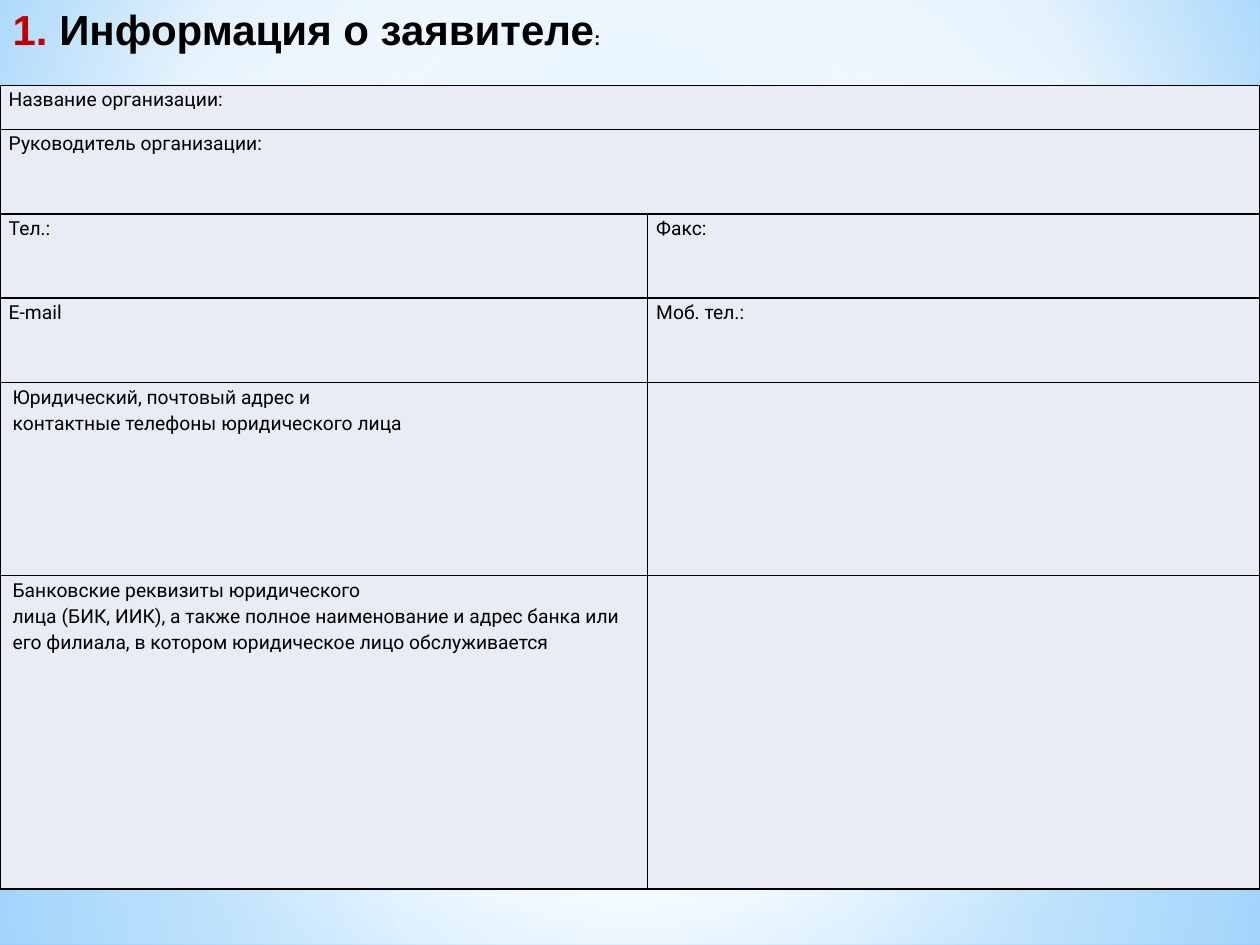
import pptx
import pptx.dml.color
import pptx.enum.shapes
import pptx.enum.text
import pptx.oxml
import pptx.oxml.ns
import pptx.util

Pt = pptx.util.Pt
RGBColor = pptx.dml.color.RGBColor
SHAPE = pptx.enum.shapes.MSO_SHAPE

BLACK = RGBColor(0x00, 0x00, 0x00)
RED = RGBColor(0xC0, 0x00, 0x00)
LAVENDER = RGBColor(0xE9, 0xEB, 0xF5)
WHITE = RGBColor(0xFF, 0xFF, 0xFF)
PALE_BLUE = RGBColor(0xB4, 0xDC, 0xFA)
SKY = RGBColor(0x9E, 0xD5, 0xFF)
DEEP_SKY = RGBColor(0x5B, 0xB9, 0xFF)

SLIDE_SIZE = (720, 540)
CENTRE = (50, 50, 50, 50)
SKY_STOPS = [(0, SKY, 100), (60, WHITE, 100), (100, DEEP_SKY, 100)]
GLOWS = [
    (SHAPE.RECTANGLE, (0, 401.8, 720, 138.2), CENTRE,
     [(0, WHITE, 91), (37, WHITE, 76), (100, PALE_BLUE, 79)]),
    (SHAPE.RECTANGLE, (0, 0, 720, 401.8), CENTRE,
     [(0, WHITE, 89), (48, WHITE, 62), (100, PALE_BLUE, 79)]),
    (SHAPE.RECTANGLE, (0, 296.6, 720, 180), None,
     [(0, WHITE, 0), (29, WHITE, 30), (45, PALE_BLUE, 40),
      (55, WHITE, 26), (65, PALE_BLUE, 60), (100, WHITE, 0)]),
    (SHAPE.OVAL, (0, 126, 720, 401.8), CENTRE,
     [(0, WHITE, 100), (56, WHITE, 0)]),
]

COLUMN_WIDTHS = (370, 350)
ROWS = [
    (25.2, ["Название организации:"]),
    (48.2, ["Руководитель организации:"]),
    (48.2, ["Тел.:", "Факс:"]),
    (48.2, ["E-mail", "Моб. тел.:"]),
    (110.2, ["Юридический, почтовый адрес и\v"
             "контактные телефоны юридического лица", ""]),
    (179.3, ["Банковские реквизиты юридического\v"
             "лица (БИК, ИИК), а также полное наименование и адрес банка "
             "или его филиала, в котором юридическое лицо обслуживается", ""]),
]
FIELD_MARGINS = dict(margin_left=Pt(5), margin_right=Pt(5),
                     margin_top=0, margin_bottom=0)
DETAIL_MARGINS = dict.fromkeys(
    ("margin_left", "margin_right", "margin_top", "margin_bottom"), Pt(0.7))
FIELD_FONT = dict(name="Roboto", size=Pt(11))
TITLE_FONT = dict(name="Arial", bold=True)
TITLE_FRAME = dict(margin_left=Pt(7.2), margin_right=Pt(7.2),
                   margin_top=Pt(6.5), margin_bottom=0, word_wrap=True,
                   vertical_anchor=pptx.enum.text.MSO_ANCHOR.TOP,
                   auto_size=pptx.enum.text.MSO_AUTO_SIZE.NONE)


def apply_format(target, values):
    """Set each named attribute on the target."""
    for name, value in values.items():
        setattr(target, name, value)


def place(shape, box):
    """Position and size a shape from a box in points."""
    apply_format(shape, dict(zip(("left", "top", "width", "height"), map(Pt, box))))


def paint_gradient(owner, stops, focus):
    """Replace the empty fill of an element with a radial or vertical gradient."""
    stop_xml = "".join(
        f'<a:gs pos="{position * 1000}"><a:srgbClr val="{color}">'
        f'<a:alpha val="{opacity * 1000}"/></a:srgbClr></a:gs>'
        for position, color, opacity in stops)
    if focus:
        edges = " ".join(f'{side}="{share * 1000}"' for side, share in zip("ltrb", focus))
        direction = f'<a:path path="circle"><a:fillToRect {edges}/></a:path>'
    else:
        direction = '<a:lin ang="5400000" scaled="0"/>'
    gradient = pptx.oxml.parse_xml(
        f'<a:gradFill {pptx.oxml.ns.nsdecls("a")} rotWithShape="1">'
        f'<a:gsLst>{stop_xml}</a:gsLst>{direction}</a:gradFill>')
    empty_fill = owner.find(".//" + pptx.oxml.ns.qn("a:noFill"))
    empty_fill.getparent().replace(empty_fill, gradient)


def add_backdrop(slide):
    """Paint the sky background and the translucent glows over it."""
    slide.background.fill.background()
    paint_gradient(slide.element, SKY_STOPS, (20, 10, 20, 60))
    for outline, box, focus, stops in GLOWS:
        glow = slide.shapes.add_shape(outline, *map(Pt, box))
        glow.shadow.inherit = False
        glow.fill.background()
        paint_gradient(glow.element, stops, focus)
        glow.line.fill.background()


def add_heading(slide):
    """Fill the title placeholder and bring it in front of the backdrop."""
    heading = slide.shapes.title
    place(heading, (0, -4.3, 720, 54.7))
    apply_format(heading.text_frame, TITLE_FRAME)
    line = heading.text_frame.paragraphs[0]
    line.alignment = pptx.enum.text.PP_ALIGN.LEFT
    for words, size, color in (("1. ", 24, RED),
                               ("Информация о заявителе", 24, BLACK),
                               (":", 11, BLACK)):
        run = line.add_run()
        run.text = words
        apply_format(run.font, dict(TITLE_FONT, size=Pt(size)))
        run.font.color.rgb = color
    heading.element.getparent().append(heading.element)


def add_borders(cell):
    """Draw a thin black line on every side of a cell."""
    properties = cell._tc.get_or_add_tcPr()
    for index, side in enumerate("LRTB"):
        properties.insert(index, pptx.oxml.parse_xml(
            f'<a:ln{side} {pptx.oxml.ns.nsdecls("a")} w="12700"><a:solidFill>'
            f'<a:srgbClr val="{BLACK}"/></a:solidFill></a:ln{side}>'))


def write_field(cell, label, is_detail):
    """Write a field label into a cell."""
    apply_format(cell, DETAIL_MARGINS if is_detail else FIELD_MARGINS)
    cell.text = label
    line = cell.text_frame.paragraphs[0]
    line.line_spacing = 1.15
    apply_format(line.font, FIELD_FONT)
    if is_detail:
        line._p.get_or_add_pPr().set("marL", str(Pt(6.5)))
    for run in line.runs:
        apply_format(run.font, FIELD_FONT)
        run.font.color.rgb = BLACK


def add_form(slide):
    """Build the applicant form as a table."""
    heights = [height for height, labels in ROWS]
    form = slide.shapes.add_table(
        len(ROWS), len(COLUMN_WIDTHS), 0, Pt(48.8),
        Pt(sum(COLUMN_WIDTHS)), Pt(sum(heights))).table
    apply_format(form, dict(first_row=False, horz_banding=False))
    for column, width in zip(form.columns, COLUMN_WIDTHS):
        column.width = Pt(width)
    for index, (height, labels) in enumerate(ROWS):
        form.rows[index].height = Pt(height)
        for cell in form.rows[index].cells:
            cell.fill.solid()
            cell.fill.fore_color.rgb = LAVENDER
            add_borders(cell)
        if len(labels) == 1:
            form.cell(index, 0).merge(form.cell(index, 1))
        for column, label in enumerate(labels):
            write_field(form.cell(index, column), label, "" in labels)


def main():
    """Build and save the slide."""
    deck = pptx.Presentation()
    deck.slide_width, deck.slide_height = map(Pt, SLIDE_SIZE)
    slide = deck.slides.add_slide(deck.slide_layouts.get_by_name("Title Only"))
    add_backdrop(slide)
    add_form(slide)
    add_heading(slide)
    deck.save("out.pptx")


if __name__ == "__main__":
    main()
